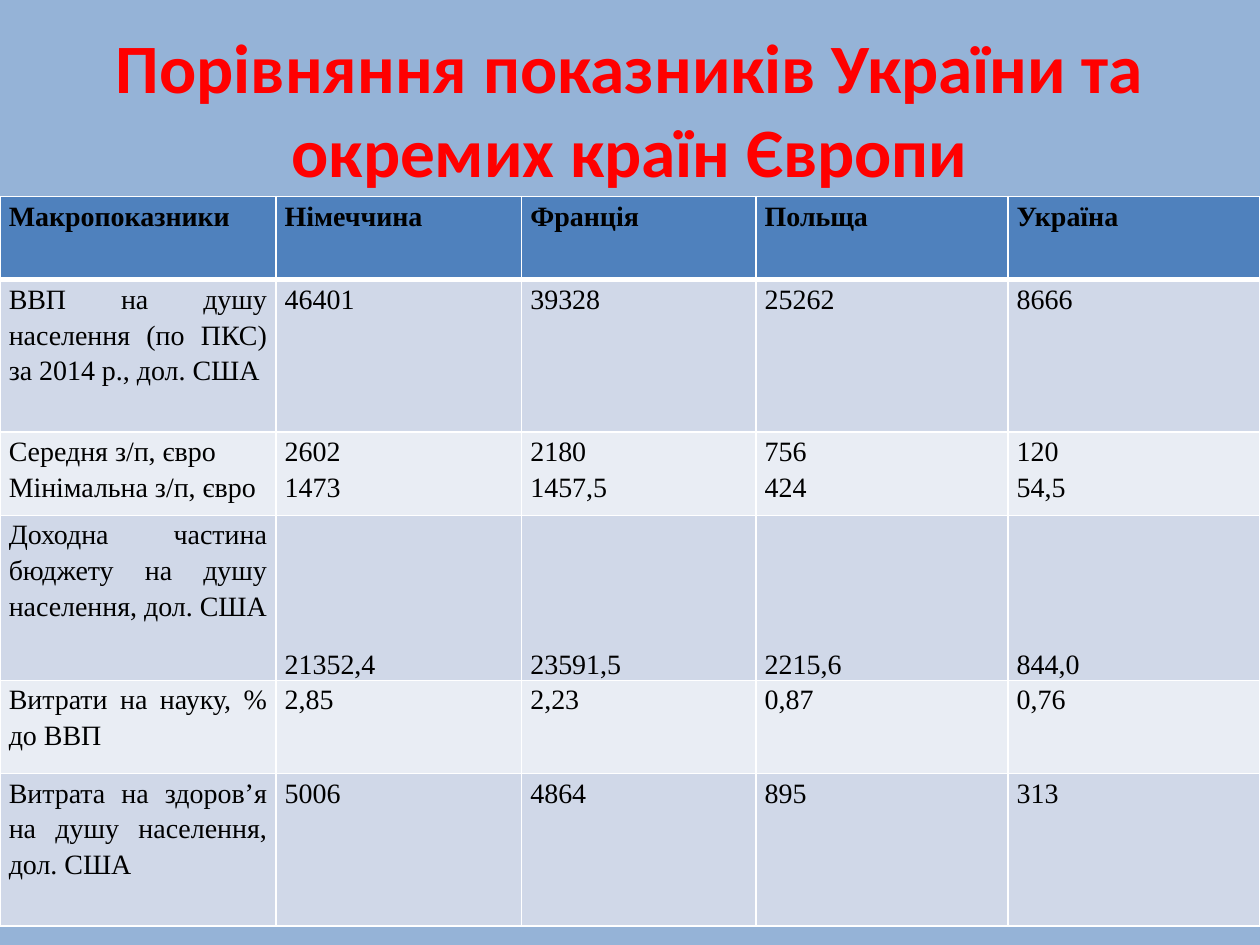
from lxml import etree
from pptx import Presentation
from pptx import util as u
from pptx.dml.color import RGBColor
from pptx.enum import text
from pptx.oxml.ns import qn

COLOURS = {
    "page": "95B3D7",
    "title": "FF0000",
    "header": "4F81BD",
    "odd": "D0D8E8",
    "even": "E9EDF4",
    "border": "FFFFFF",
    "ink": "000000",
}
WIDTH, HEIGHT = u.Inches(10), u.Inches(7.5)
COLUMNS = [2.19, 1.95, 1.86, 2, 2]
ROWS = [0.66, 1.21, 0.66, 1.31, 0.74, 1.21]
BUDGET_ROW = 3
TITLE = "Порівняння показників України та окремих країн Європи"
INDICATORS = [
    ["Макропоказники", "Німеччина", "Франція", "Польща", "Україна"],
    ["ВВП на душу населення (по ПКС) за 2014 р., дол. США",
     "46401", "39328", "25262", "8666"],
    ["Середня з/п, євро\nМінімальна з/п, євро",
     "2602\n1473", "2180\n1457,5", "756\n424", "120\n54,5"],
    ["Доходна частина бюджету на душу населення, дол. США",
     "21352,4", "23591,5", "2215,6", "844,0"],
    ["Витрати на науку, % до ВВП", "2,85", "2,23", "0,87", "0,76"],
    ["Витрата на здоров’я на душу населення, дол. США",
     "5006", "4864", "895", "313"],
]


def colour(name):
    """Return the named colour."""
    return RGBColor.from_string(COLOURS[name])


def add_span(para, words, font, size, ink, bold):
    """Append one formatted run to a paragraph."""
    span = para.add_run()
    span.text = words
    span.font.name = font
    span.font.size = u.Pt(size)
    span.font.bold = bold
    span.font.color.rgb = colour(ink)


def add_title(page):
    """Add the centred heading."""
    box = page.shapes.add_textbox(
        int(WIDTH * 0.05), int(HEIGHT * 0.04), int(WIDTH * 0.9), u.Inches(1.11))
    frame = box.text_frame
    frame.word_wrap = True
    frame.vertical_anchor = text.MSO_ANCHOR.MIDDLE
    para = frame.paragraphs[0]
    para.alignment = text.PP_ALIGN.CENTER
    add_span(para, TITLE, "Calibri", 39.6, "title", True)


def add_border(cell, side, points):
    """Draw one edge of a cell."""
    properties = cell._tc.get_or_add_tcPr()
    line = etree.SubElement(properties, qn(f"a:ln{side}"), w=str(u.Pt(points)))
    fill = etree.SubElement(line, qn("a:solidFill"))
    etree.SubElement(fill, qn("a:srgbClr"), val=COLOURS["border"])


def fill_cell(cell, words, row, column):
    """Write and style one cell according to its place."""
    header = row == 0
    cell.margin_left = cell.margin_right = u.Inches(0.07)
    cell.margin_top = cell.margin_bottom = 0
    bottom = row == BUDGET_ROW and column > 0
    cell.vertical_anchor = text.MSO_ANCHOR.BOTTOM if bottom else text.MSO_ANCHOR.TOP
    for side in "LRTB":
        thick = (row, side) in ((0, "B"), (1, "T"))
        add_border(cell, side, 3 if thick else 1)
    cell.fill.solid()
    cell.fill.fore_color.rgb = colour("header" if header else "odd" if row % 2 else "even")
    frame = cell.text_frame
    for index, line in enumerate(words.split("\n")):
        para = frame.add_paragraph() if index else frame.paragraphs[0]
        para.alignment = text.PP_ALIGN.JUSTIFY
        para.line_spacing = 1.15
        add_span(para, line, "Times New Roman", 16, "ink", header)


def add_indicators(page):
    """Add the table of indicators by country."""
    table = page.shapes.add_table(
        len(ROWS), len(COLUMNS), 0, u.Inches(1.56), WIDTH, u.Inches(sum(ROWS))).table
    for column, width in zip(table.columns, COLUMNS):
        column.width = u.Inches(width)
    for row, height in zip(table.rows, ROWS):
        row.height = u.Inches(height)
    for row, line in enumerate(INDICATORS):
        for column, words in enumerate(line):
            fill_cell(table.cell(row, column), words, row, column)


def main():
    """Build and save the deck."""
    deck = Presentation()
    deck.slide_width, deck.slide_height = WIDTH, HEIGHT
    page = deck.slides.add_slide(deck.slide_layouts[6])
    page.background.fill.solid()
    page.background.fill.fore_color.rgb = colour("page")
    add_title(page)
    add_indicators(page)
    deck.save("out.pptx")


if __name__ == "__main__":
    main()
